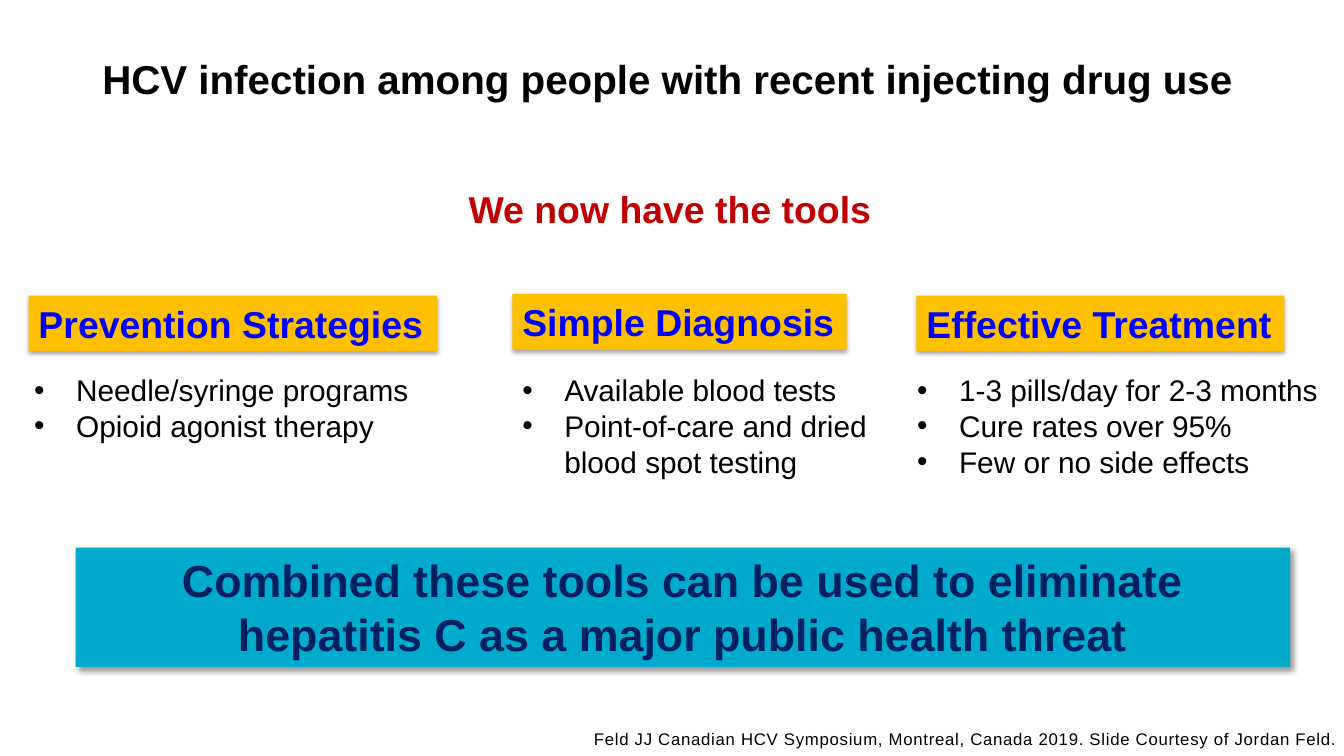
import pptx
import pptx.util
import pptx.dml.color
import pptx.enum.shapes
import pptx.enum.text
import lxml.etree
from pptx.oxml.ns import qn

ALIGN = pptx.enum.text.PP_ALIGN
ANCHOR = pptx.enum.text.MSO_ANCHOR
RECTANGLE = pptx.enum.shapes.MSO_SHAPE.RECTANGLE

presentation = pptx.Presentation()
presentation.slide_width = pptx.util.Inches(13.333)
presentation.slide_height = pptx.util.Inches(7.5)
slide = presentation.slides.add_slide(presentation.slide_layouts[6])

# Grid of 160 columns by 90 rows, with square cells
CELL = presentation.slide_height / 90


def add_box(place, lines, size, color, bold=False, align=ALIGN.LEFT, wrap=True,
            bullet=False, fill=None, shadow=None):
    """Place a text box, or a filled rectangle with a shadow (opacity, blur, distance, angle)."""
    area = [round(value * CELL) for value in place]
    if fill:
        shape = slide.shapes.add_shape(RECTANGLE, *area)
        shape.fill.solid()
        shape.fill.fore_color.rgb = pptx.dml.color.RGBColor.from_string(fill)
        shape.line.fill.background()
        shape.shadow.inherit = False
        opacity, blur, distance, angle = shadow
        effects = shape._element.spPr.find(qn("a:effectLst"))
        outer = lxml.etree.SubElement(
            effects, qn("a:outerShdw"), blurRad=str(pptx.util.Pt(blur)),
            dist=str(pptx.util.Pt(distance)), dir=str(angle * 60000), rotWithShape="0")
        tint = lxml.etree.SubElement(outer, qn("a:srgbClr"), val="000000")
        lxml.etree.SubElement(tint, qn("a:alpha"), val=str(opacity * 1000))
    else:
        shape = slide.shapes.add_textbox(*area)
    frame = shape.text_frame
    frame.word_wrap = wrap
    frame.vertical_anchor = ANCHOR.TOP
    for index, line in enumerate(lines):
        paragraph = frame.add_paragraph() if index else frame.paragraphs[0]
        paragraph.alignment = align
        if bullet:
            properties = paragraph._p.get_or_add_pPr()
            indent = round(5 * CELL)
            properties.set("marL", str(indent))
            properties.set("indent", str(-indent))
            lxml.etree.SubElement(properties, qn("a:buFont"), typeface="Arial")
            lxml.etree.SubElement(properties, qn("a:buChar"), char="•")
        run = paragraph.add_run()
        run.text = line
        run.font.name = "Arial"
        run.font.size = pptx.util.Pt(size)
        run.font.bold = bold
        run.font.color.rgb = pptx.dml.color.RGBColor.from_string(color)
    return shape


# Title and subtitle
title = add_box((11, 1.8, 149, 14.5),
                ["HCV infection among people with recent injecting drug use"],
                28.8, "000000", bold=True)
title.text_frame.vertical_anchor = ANCHOR.MIDDLE
title.text_frame.paragraphs[0].line_spacing = 1.1
add_box((54.6, 21.6, 50.6, 6.6), ["We now have the tools"], 26.7, "C00000",
        bold=True, wrap=False)

# Three tools: heading, its left, top and width; list left and width, wrapping, rows, items
tools = [
    ("Prevention Strategies", 3.4, 35.2, 48.6, 2.9, 47.5, False, 2,
     ["Needle/syringe programs", "Opioid agonist therapy"]),
    ("Simple Diagnosis", 61, 35, 39.8, 61, 47, True, 3,
     ["Available blood tests", "Point-of-care and dried blood spot testing"]),
    ("Effective Treatment", 109.1, 35.2, 43.8, 108, 50.8, False, 3,
     ["1-3 pills/day for 2-3 months", "Cure rates over 95%", "Few or no side effects"]),
]
for heading, left, top, width, list_left, list_width, wrap, rows, items in tools:
    add_box((left, top, width, 6.6), [heading], 26.7, "0000FF", bold=True, wrap=False,
            fill="FFC000", shadow=(35, 3.1, 1.8, 90))
    add_box((list_left, 43.7, list_width, 1.2 + 4.3 * rows), items, 21.3, "000000",
            wrap=wrap, bullet=True)

# Conclusion banner
add_box((9, 65.2, 144.6, 14.2),
        ["Combined these tools can be used to eliminate hepatitis C as a major public health threat"],
        32, "002060", bold=True, align=ALIGN.CENTER, fill="00AACD", shadow=(40, 4, 3, 45))

# Citation with slightly spaced letters
citation = add_box(
    (46.9, 85.9, 113.5, 4.1),
    ["Feld JJ Canadian HCV Symposium, Montreal, Canada 2019. Slide Courtesy of Jordan Feld."],
    12, "000000", align=ALIGN.RIGHT)
paragraph = citation.text_frame.paragraphs[0]
paragraph.line_spacing = 1.1
paragraph.runs[0].font._element.set("spc", "50")

presentation.save("out.pptx")
